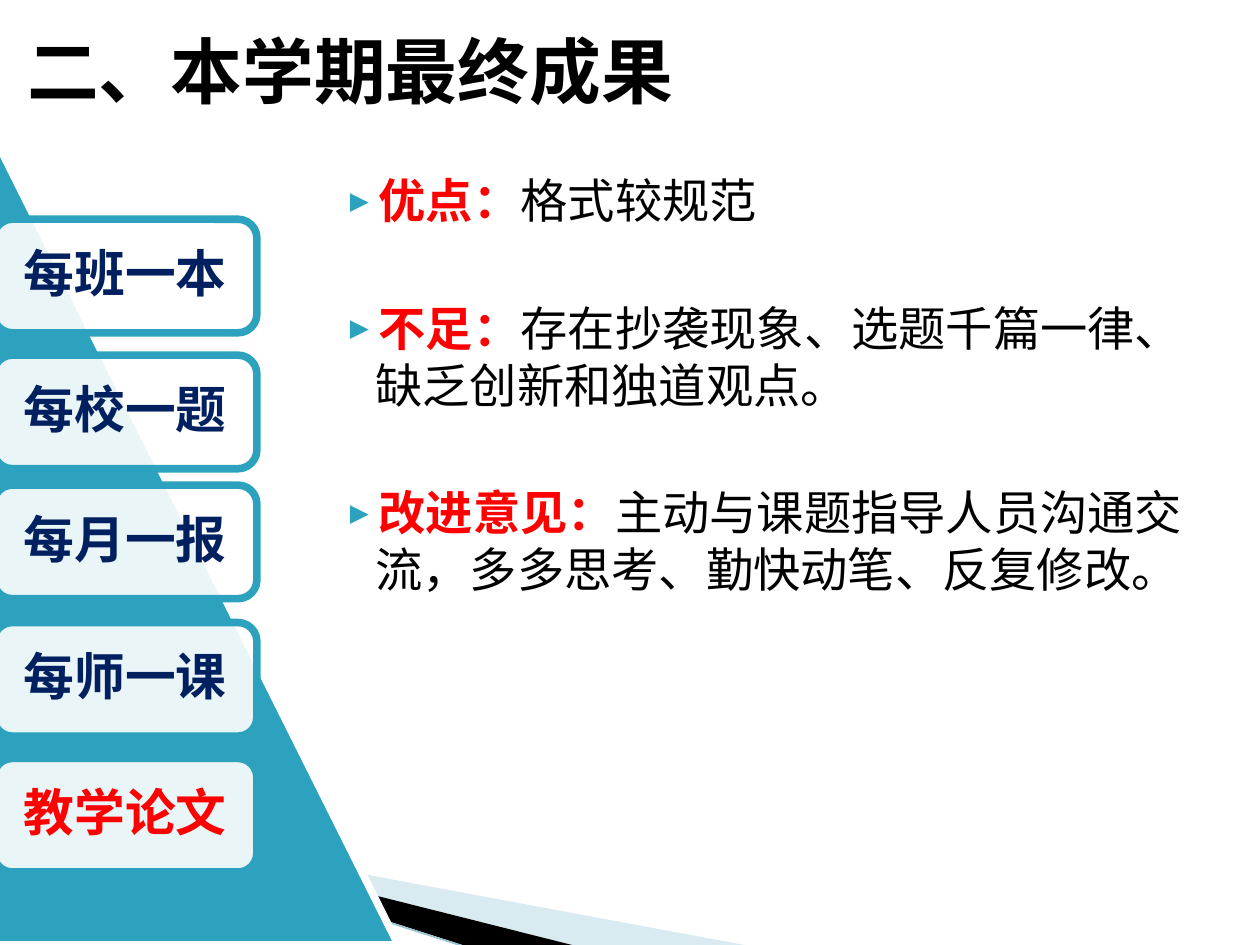
from dataclasses import dataclass

from lxml import etree
from pptx import Presentation
from pptx.dml.color import RGBColor
from pptx.enum.shapes import MSO_CONNECTOR, MSO_SHAPE
from pptx.enum.text import MSO_ANCHOR, PP_ALIGN
from pptx.oxml.ns import qn
from pptx.util import Cm, Pt

STRAIGHT = MSO_CONNECTOR.STRAIGHT
TRIANGLE = MSO_SHAPE.ISOSCELES_TRIANGLE
ROUNDED_RECTANGLE = MSO_SHAPE.ROUNDED_RECTANGLE
MIDDLE = MSO_ANCHOR.MIDDLE
CENTER = PP_ALIGN.CENTER


@dataclass(frozen=True)
class Theme:
    teal: str = "2DA2BF"
    pale_blue: str = "A0CBDC"
    edge_blue: str = "97C5D8"
    navy: str = "002060"
    red: str = "FF0000"
    black: str = "000000"
    white: str = "FFFFFF"
    body_font: str = "Noto Sans CJK SC"
    heading_font: str = "Noto Sans Mono"
    title_size: float = 41
    tab_size: float = 29
    body_size: float = 27
    outline: float = 4.33


@dataclass(frozen=True)
class Tab:
    label: str
    top: float
    color: str


@dataclass(frozen=True)
class Remark:
    heading: str
    text: str


@dataclass(frozen=True)
class Wedge:
    points: tuple
    color: str
    opacity: int = 100


THEME = Theme()
TABS = (
    Tab("每班一本", 4.42, THEME.navy),
    Tab("每校一题", 7.16, THEME.navy),
    Tab("每月一报", 9.78, THEME.navy),
    Tab("每师一课", 12.55, THEME.navy),
    Tab("教学论文", 15.29, THEME.red),
)
REMARKS = (
    Remark("优点：", "格式较规范"),
    Remark("不足：", "存在抄袭现象、选题千篇一律、缺乏创新和独道观点。"),
    Remark("改进意见：", "主动与课题指导人员沟通交流，多多思考、勤快动笔、反复修改。"),
)
WEDGES = (
    Wedge(((1.4, 16.52), (15.11, 19.07), (11.58, 19.07)), THEME.pale_blue, 40),
    Wedge(((1.36, 16.49), (11.61, 19.07), (9.45, 19.09)), THEME.black),
)


def rgb(color: str) -> RGBColor:
    return RGBColor.from_string(color)


def fill_shape(shape, color: str, opacity: int = 100) -> None:
    """Give a solid fill, with opacity in percent, and no shadow."""
    shape.shadow.inherit = False
    shape.fill.solid()
    shape.fill.fore_color.rgb = rgb(color)
    if opacity < 100:
        color_element = shape._element.spPr.find(qn("a:solidFill"))[0]
        etree.SubElement(color_element, qn("a:alpha"), val=str(opacity * 1000))


def outline_shape(shape, color: str) -> None:
    shape.line.color.rgb = rgb(color)
    shape.line.width = Pt(THEME.outline)


def add_run(paragraph, text: str, font_name: str, size: float, color: str, bold: bool) -> None:
    run = paragraph.add_run()
    run.text = text
    run.font.name = font_name
    run.font.size = Pt(size)
    run.font.bold = bold
    run.font.color.rgb = rgb(color)
    east_asian = etree.SubElement(run.font._element, qn("a:ea"))
    east_asian.set("typeface", font_name)


def add_bullet(paragraph) -> None:
    properties = paragraph._p.get_or_add_pPr()
    properties.set("marL", str(Cm(1.02)))
    properties.set("indent", str(Cm(-0.71)))
    color = etree.SubElement(properties, qn("a:buClr"))
    etree.SubElement(color, qn("a:srgbClr"), val=THEME.teal)
    etree.SubElement(properties, qn("a:buSzPct"), val="68000")
    etree.SubElement(properties, qn("a:buFont"), typeface=THEME.heading_font)
    etree.SubElement(properties, qn("a:buChar"), char="▶")


def add_wedge(slide, wedge: Wedge) -> None:
    start, *others = [(Cm(x), Cm(y)) for x, y in wedge.points]
    builder = slide.shapes.build_freeform(*start, scale=1.0)
    builder.add_line_segments(others, close=True)
    shape = builder.convert_to_shape()
    fill_shape(shape, wedge.color, wedge.opacity)
    shape.line.fill.background()


def add_edge_line(slide) -> None:
    line = slide.shapes.add_connector(STRAIGHT, Cm(-0.03), Cm(16.08), Cm(9.42), Cm(19.1))
    line.line.color.rgb = rgb(THEME.edge_blue)
    line.line.width = Pt(0.95)
    etree.SubElement(line._element.spPr, qn("a:effectLst"))


def add_remarks(slide) -> None:
    box = slide.shapes.add_textbox(Cm(6.3), Cm(3.33), Cm(18.01), Cm(15.19))
    frame = box.text_frame
    frame.word_wrap = True
    for index, remark in enumerate(REMARKS):
        paragraph = frame.add_paragraph() if index else frame.paragraphs[0]
        if index:
            paragraph.space_before = Pt(40.5)
        add_bullet(paragraph)
        add_run(paragraph, remark.heading, THEME.body_font, THEME.body_size, THEME.red, True)
        add_run(paragraph, remark.text, THEME.body_font, THEME.body_size, THEME.black, False)


def add_title(slide) -> None:
    box = slide.shapes.add_textbox(Cm(0.3), Cm(0.33), Cm(24.66), Cm(2.16))
    frame = box.text_frame
    frame.word_wrap = True
    frame.vertical_anchor = MIDDLE
    add_run(frame.paragraphs[0], "二、本学期最终成果",
            THEME.heading_font, THEME.title_size, THEME.black, True)


def add_triangle(slide) -> None:
    triangle = slide.shapes.add_shape(TRIANGLE, Cm(-8.1), Cm(2.92), Cm(16.13), Cm(16.13))
    fill_shape(triangle, THEME.teal)
    outline_shape(triangle, THEME.white)


def add_tab(slide, tab: Tab) -> None:
    shape = slide.shapes.add_shape(ROUNDED_RECTANGLE, Cm(-0.13), Cm(tab.top), Cm(5.31), Cm(2.29))
    fill_shape(shape, THEME.white, 90)
    outline_shape(shape, THEME.teal)
    frame = shape.text_frame
    frame.word_wrap = True
    frame.vertical_anchor = MIDDLE
    frame.margin_left = frame.margin_right = Cm(0.1)
    frame.margin_top = frame.margin_bottom = Cm(0.3)
    paragraph = frame.paragraphs[0]
    paragraph.alignment = CENTER
    paragraph.line_spacing = 0.9
    add_run(paragraph, tab.label, THEME.heading_font, THEME.tab_size, tab.color, True)


def main() -> None:
    presentation = Presentation()
    presentation.slide_width = Cm(25.4)
    presentation.slide_height = Cm(19.05)
    slide = presentation.slides.add_slide(presentation.slide_layouts[6])
    for wedge in WEDGES:
        add_wedge(slide, wedge)
    add_edge_line(slide)
    add_remarks(slide)
    add_title(slide)
    add_triangle(slide)
    for tab in TABS:
        add_tab(slide, tab)
    presentation.save("out.pptx")


if __name__ == "__main__":
    main()
